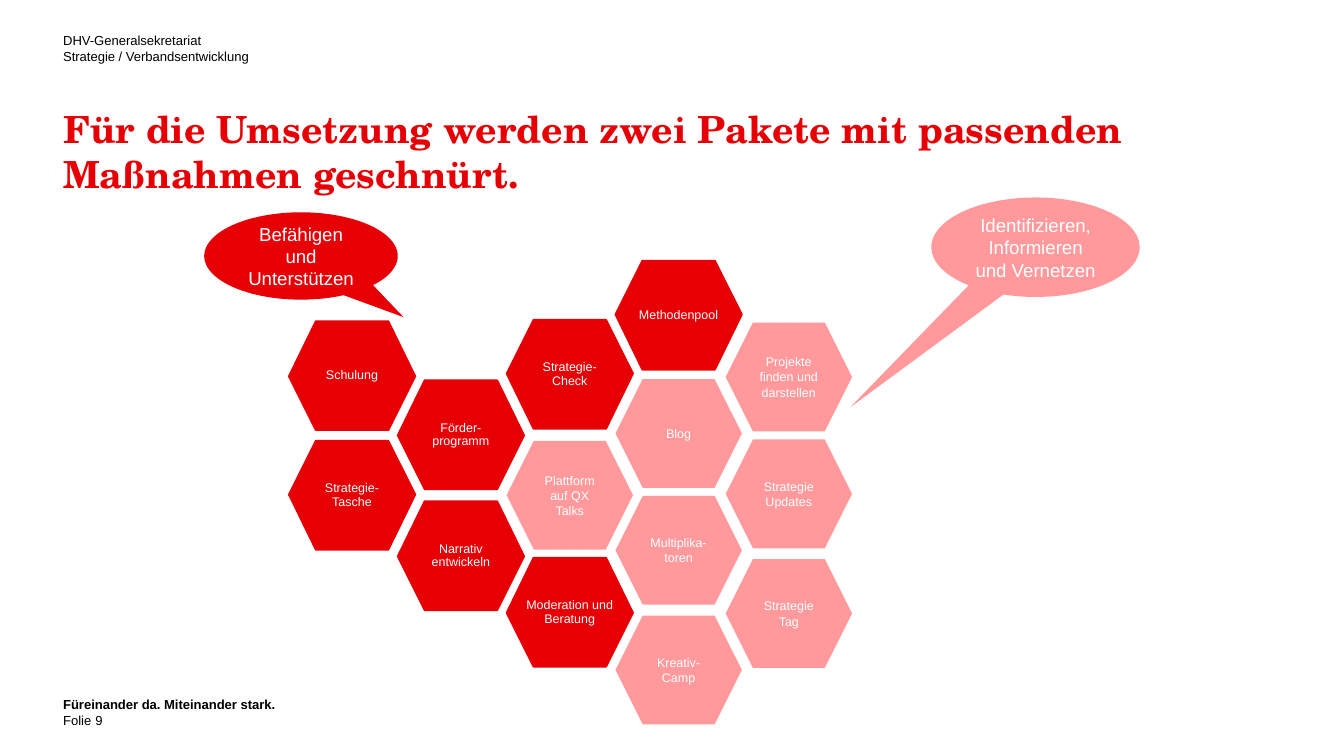
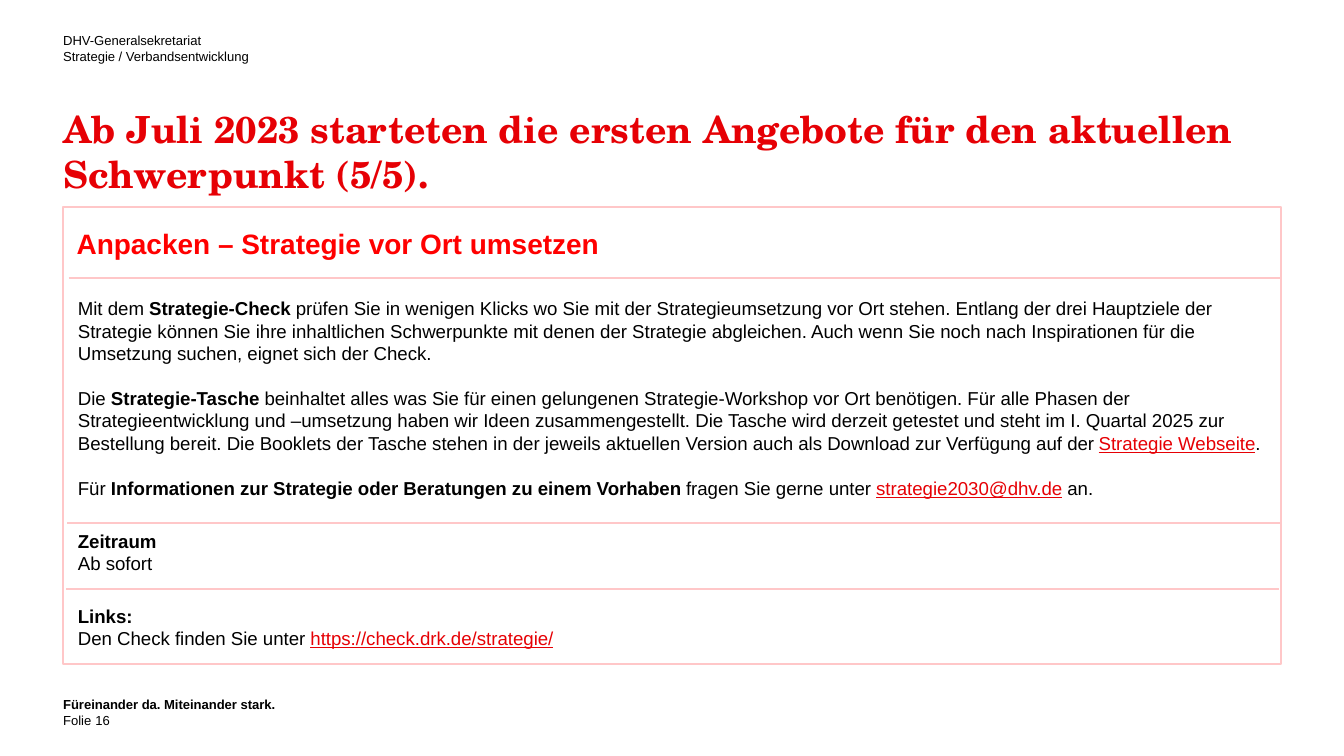
from lxml import etree
from pptx import Presentation
from pptx.dml.color import RGBColor
from pptx.enum.shapes import MSO_CONNECTOR, MSO_SHAPE
from pptx.enum.text import MSO_ANCHOR, MSO_AUTO_SIZE, PP_ALIGN
from pptx.oxml.ns import qn
from pptx.util import Pt

PX = 9144
WIDTH = 1000
RED = RGBColor(0xE6, 0x00, 0x05)
BRIGHT_RED = RGBColor(0xFF, 0x00, 0x00)
ROSE = RGBColor(0xFF, 0x8F, 0x91)
PALE_ROSE = RGBColor(0xFF, 0xC7, 0xC8)
BLACK = RGBColor(0x00, 0x00, 0x00)
WHITE = RGBColor(0xFF, 0xFF, 0xFF)
SANS, SERIF = "Arial", "TeX Gyre Schola"
TITLE_ONLY = 5
LEFT, CENTER = PP_ALIGN.LEFT, PP_ALIGN.CENTER
TOP, MIDDLE, BOTTOM = MSO_ANCHOR.TOP, MSO_ANCHOR.MIDDLE, MSO_ANCHOR.BOTTOM
NO_AUTOSIZE = MSO_AUTO_SIZE.NONE
HEXAGON = MSO_SHAPE.HEXAGON
CALLOUT = MSO_SHAPE.OVAL_CALLOUT
RECTANGLE = MSO_SHAPE.RECTANGLE
STRAIGHT = MSO_CONNECTOR.STRAIGHT

MARGIN, CONTENT_W = 47, 906
HEX_W, HEX_H, HEX_CUT = 94, 81, 20
HEX_SIZE = 6.75
BOLD, LINK = "bold", "link"
NO_INSETS, TEXT_INSETS = (0, 0), (7, 4)
SHAPE_INSETS, HEX_INSETS = (10, 5), (14, 13)


def write_text(tf, paragraphs, size=10, color=BLACK, font=SANS, bold=False,
               align=LEFT, anchor=TOP, insets=NO_INSETS, spacing=None, gap=0):
    tf.word_wrap = True
    tf.auto_size = NO_AUTOSIZE
    tf.vertical_anchor = anchor
    tf.margin_left = tf.margin_right = insets[0] * PX
    tf.margin_top = tf.margin_bottom = insets[1] * PX
    if isinstance(paragraphs, str):
        paragraphs = [paragraphs]
    for i, runs in enumerate(paragraphs):
        p = tf.paragraphs[0] if i == 0 else tf.add_paragraph()
        p.alignment = align
        if spacing:
            p.line_spacing = spacing
        if i and gap:
            p.space_before = Pt(gap)
        for run in [runs] if isinstance(runs, str) else runs:
            text, style = (run, None) if isinstance(run, str) else run
            r = p.add_run()
            r.text = text
            r.font.name = font
            r.font.size = Pt(size)
            r.font.bold = bold or style == BOLD
            r.font.underline = style == LINK
            r.font.color.rgb = RED if style == LINK else color


class Deck:
    def __init__(self):
        self.prs = Presentation()
        self.prs.slide_width = WIDTH * PX
        self.prs.slide_height = WIDTH * PX * 9 // 16
        self.s = None

    def slide(self, title, number):
        layout = self.prs.slide_layouts[TITLE_ONLY]
        self.s = self.prs.slides.add_slide(layout)
        small = {"size": 7, "spacing": Pt(9)}
        self.text(MARGIN, 529, 30, 13, "Folie", anchor=BOTTOM, **small)
        self.text(MARGIN, 23, 179, 37,
                  ["DHV-Generalsekretariat", "Strategie / Verbandsentwicklung"],
                  **small)
        self.text(MARGIN, 517, CONTENT_W, 9,
                  "Füreinander da. Miteinander stark.", bold=True, **small)
        self.text(71, 530, 225, 12, str(number), anchor=BOTTOM, **small)
        sp = self.s.shapes.title
        sp.left, sp.top = MARGIN * PX, 79 * PX
        sp.width, sp.height = CONTENT_W * PX, 64 * PX
        write_text(sp.text_frame, title, size=20, color=RED, font=SERIF,
                   bold=True, spacing=Pt(24))

    def text(self, x, y, w, h, paragraphs, **fmt):
        sp = self.s.shapes.add_textbox(x * PX, y * PX, w * PX, h * PX)
        write_text(sp.text_frame, paragraphs, **fmt)

    def paint(self, sp, fill=None, line=None, alpha=None):
        sp.shadow.inherit = False
        if fill is None:
            sp.fill.background()
        else:
            sp.fill.solid()
            sp.fill.fore_color.rgb = fill
        if alpha:
            clr = sp._element.spPr.find(qn("a:solidFill")).find(qn("a:srgbClr"))
            etree.SubElement(clr, qn("a:alpha")).set("val", str(alpha * 1000))
        if line is None:
            sp.line.fill.background()
        else:
            sp.line.color.rgb = line
            sp.line.width = Pt(1)

    def shape(self, kind, x, y, w, h, **look):
        sp = self.s.shapes.add_shape(kind, x * PX, y * PX, w * PX, h * PX)
        self.paint(sp, **look)
        return sp

    def red_hexagon(self, x, y, label):
        middle, right, bottom = y + HEX_H / 2, x + HEX_W, y + HEX_H
        fb = self.s.shapes.build_freeform(x, middle, scale=PX)
        fb.add_line_segments([(x + HEX_CUT, y), (right - HEX_CUT, y),
                              (right, middle), (right - HEX_CUT, bottom),
                              (x + HEX_CUT, bottom)])
        sp = fb.convert_to_shape()
        self.paint(sp, fill=RED, line=RED)
        write_text(sp.text_frame, label, size=HEX_SIZE, color=WHITE, align=CENTER,
                   anchor=MIDDLE, insets=HEX_INSETS, spacing=0.9)

    def rose_hexagon(self, x, y, label):
        sp = self.shape(HEXAGON, x, y, HEX_W, HEX_H, fill=ROSE, alpha=90)
        sp.adjustments[0] = 0.25
        write_text(sp.text_frame, label, size=HEX_SIZE, color=WHITE, align=CENTER,
                   anchor=MIDDLE, insets=SHAPE_INSETS)

    def callout(self, x, y, w, h, label, tip, **look):
        sp = self.shape(CALLOUT, x, y, w, h, **look)
        sp.adjustments[0], sp.adjustments[1] = tip
        write_text(sp.text_frame, label, color=WHITE, align=CENTER,
                   anchor=MIDDLE, insets=SHAPE_INSETS)

    def rule(self, x, y, w):
        ln = self.s.shapes.add_connector(STRAIGHT, x * PX, y * PX,
                                         (x + w) * PX, y * PX)
        ln.line.color.rgb = PALE_ROSE
        ln.line.width = Pt(1)
        etree.SubElement(ln._element.spPr, qn("a:effectLst"))


def build_packages(deck):
    deck.slide("Für die Umsetzung werden zwei Pakete mit passenden "
               "Maßnahmen geschnürt.", 9)
    red, rose = deck.red_hexagon, deck.rose_hexagon
    columns = [
        [(239, red, "Schulung"), (328, red, "Strategie-Tasche")],
        [(283, red, "Förder-programm"), (373, red, "Narrativ entwickeln")],
        [(238, red, "Strategie-Check"), (328, rose, "Plattform auf QX Talks"),
         (415, red, "Moderation und Beratung")],
        [(194, red, "Methodenpool"), (282, rose, "Blog"),
         (369, rose, "Multiplika-toren"), (458, rose, "Kreativ-Camp")],
        [(240, rose, "Projekte finden und darstellen"),
         (327, rose, "Strategie Updates"), (416, rose, "Strategie Tag")],
    ]
    for i, column in enumerate(columns):
        for top, draw, label in column:
            draw(215 + 325 * i // 4, top, label)
    deck.callout(152, 158, 144, 65, "Befähigen und Unterstützen",
                 (0.53, 0.7), fill=RED)
    deck.callout(693, 147, 155, 74, "Identifizieren, Informieren und Vernetzen",
                 (-0.89, 1.61), fill=ROSE, alpha=90)


def build_offers(deck):
    deck.slide("Ab Juli 2023 starteten die ersten Angebote für den aktuellen "
               "Schwerpunkt (5/5).", 16)
    deck.text(50, 165, 903, 32, "Anpacken – Strategie vor Ort umsetzen", size=15,
              color=BRIGHT_RED, bold=True, anchor=MIDDLE, insets=TEXT_INSETS)
    deck.text(51, 217, 900, 174, [
        ["Mit dem ", ("Strategie-Check ", BOLD),
         "prüfen Sie in wenigen Klicks wo Sie mit der Strategieumsetzung vor Ort "
         "stehen. Entlang der drei Hauptziele der Strategie können Sie ihre "
         "inhaltlichen Schwerpunkte mit denen der Strategie abgleichen. Auch wenn "
         "Sie noch nach Inspirationen für die Umsetzung suchen, eignet sich der "
         "Check."],
        ["Die ", ("Strategie-Tasche ", BOLD),
         "beinhaltet alles was Sie für einen gelungenen Strategie-Workshop vor Ort "
         "benötigen. Für alle Phasen der Strategieentwicklung und –umsetzung haben "
         "wir Ideen zusammengestellt. Die Tasche wird derzeit getestet und steht "
         "im I. Quartal 2025 zur Bestellung bereit. Die Booklets der Tasche stehen "
         "in der jeweils aktuellen Version auch als Download zur Verfügung auf der ",
         ("Strategie Webseite", LINK), "."],
        ["Für ",
         ("Informationen zur Strategie oder Beratungen zu einem Vorhaben ", BOLD),
         "fragen Sie gerne unter ", ("strategie2030@dhv.de", LINK), " an."],
    ], insets=TEXT_INSETS, gap=12)
    deck.shape(RECTANGLE, MARGIN, 154, CONTENT_W, 340, line=PALE_ROSE)
    deck.text(51, 390, 610, 41, [[("Zeitraum", BOLD)], "Ab sofort"],
              insets=TEXT_INSETS)
    deck.text(51, 446, 610, 41, [
        [("Links:", BOLD)],
        ["Den Check finden Sie unter ", ("https://check.drk.de/strategie/", LINK)],
    ], insets=TEXT_INSETS)
    for x, y in [(51, 207), (50, 389), (49, 438)]:
        deck.rule(x, y, 903)


def main():
    deck = Deck()
    build_packages(deck)
    build_offers(deck)
    deck.prs.save("out.pptx")


if __name__ == "__main__":
    main()
